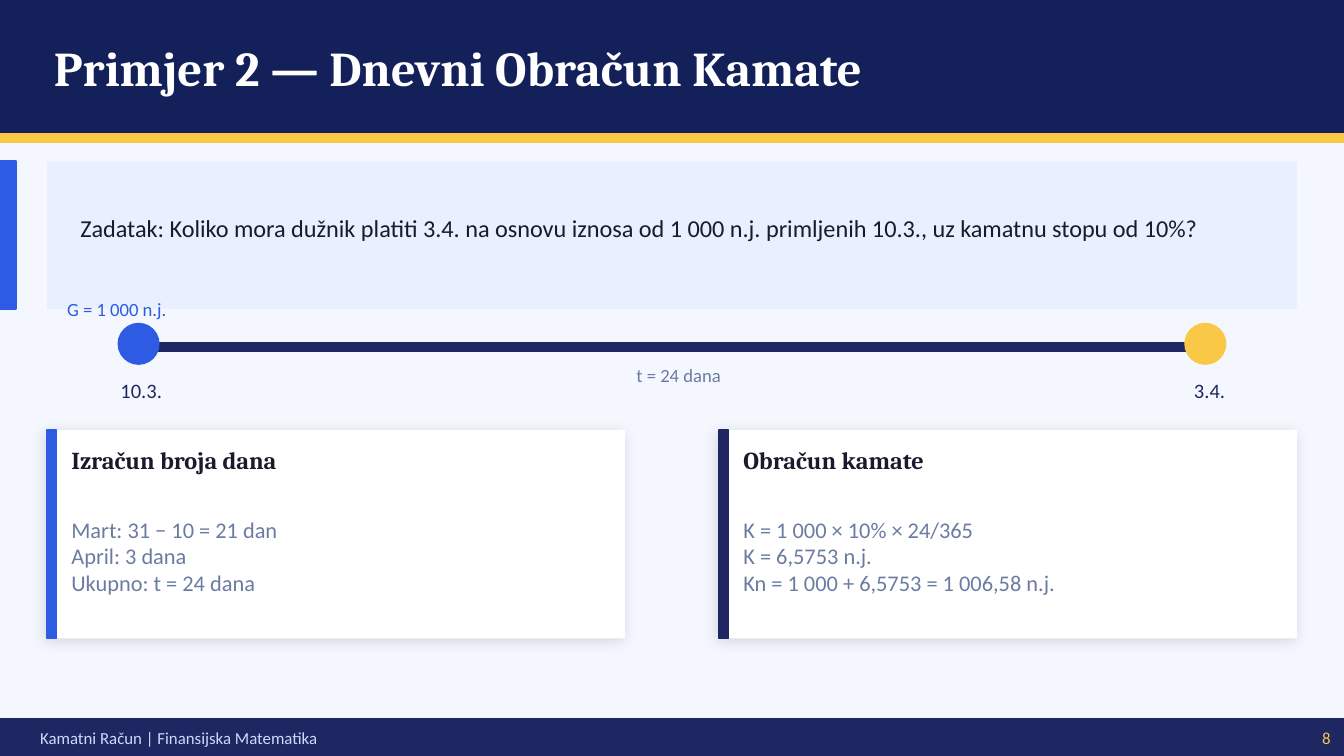
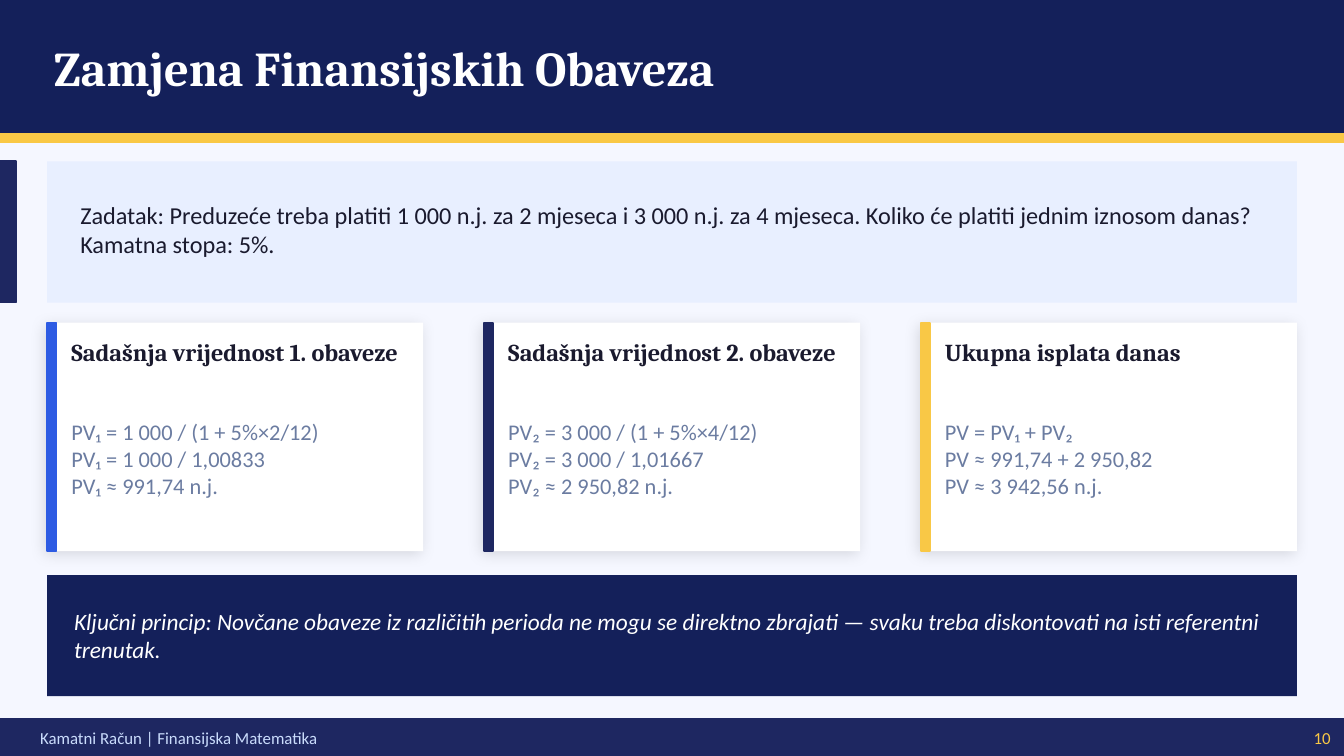
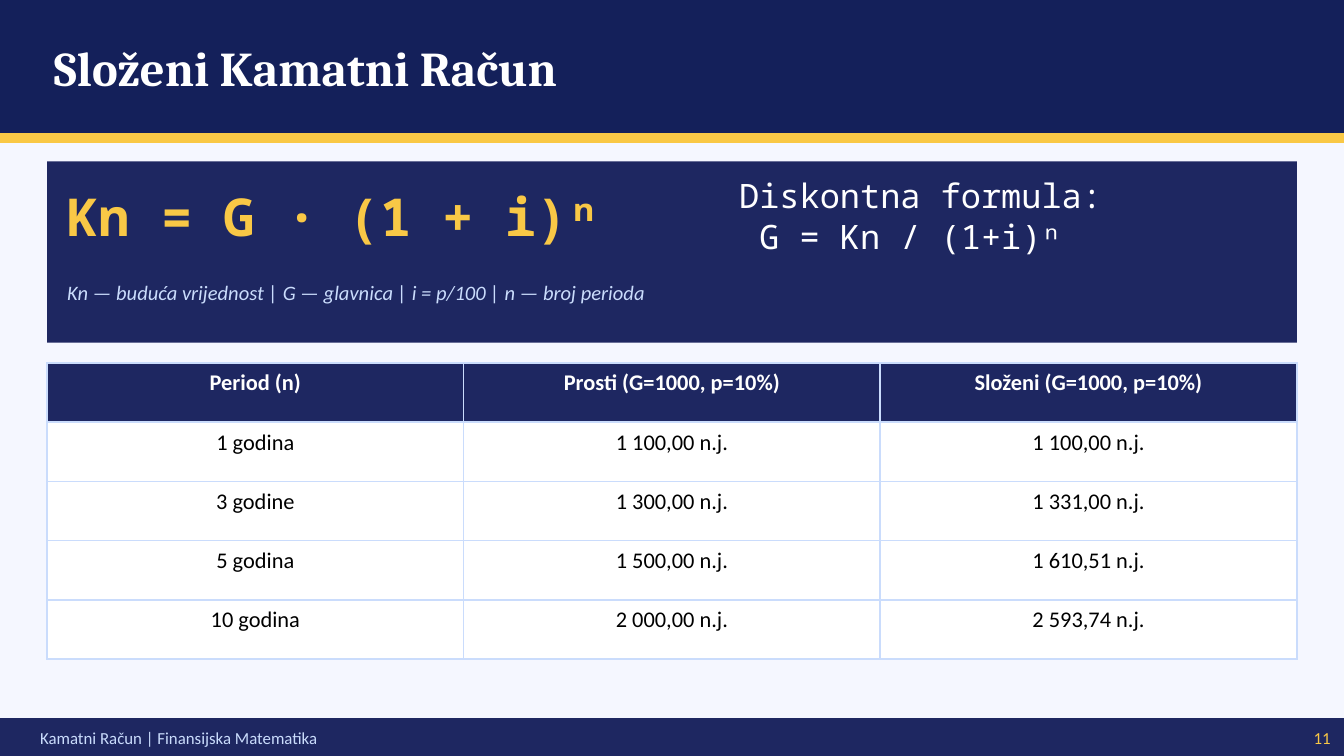
from lxml.etree import SubElement
from pptx import Presentation
from pptx.dml.color import RGBColor
from pptx.enum.shapes import MSO_SHAPE
from pptx.enum.text import MSO_ANCHOR, MSO_AUTO_SIZE, PP_ALIGN
from pptx.oxml.ns import qn
from pptx.util import Cm, Pt

COLORS = {
    "page": "F5F7FF", "deep": "14205A", "navy": "1E2761", "blue": "2D5BE3",
    "gold": "F9C846", "pale": "E8EFFF", "ice": "CADCFC", "ink": "1A1A2E",
    "slate": "6B7CA1", "white": "FFFFFF", "black": "000000",
}
SLIDE_W, SLIDE_H = 25.4, 14.29
LEFT, CONTENT_W = 0.89, 23.62
FOOTER_Y, FOOTER_H = 13.59, 0.7


def rgb(name):
    return RGBColor.from_string(COLORS[name])


def write(tf, text, size=12, font="Calibri", color="ink", bold=False,
          italic=False, align=PP_ALIGN.LEFT):
    for i, line in enumerate(text.split("\n")):
        p = tf.paragraphs[0] if i == 0 else tf.add_paragraph()
        p.alignment = align
        r = p.add_run()
        r.text = line
        r.font.size = Pt(size)
        r.font.name = font
        r.font.bold = bold
        r.font.italic = italic
        r.font.color.rgb = rgb(color)


def format_frame(tf):
    tf.word_wrap = True
    tf.auto_size = MSO_AUTO_SIZE.NONE
    tf.vertical_anchor = MSO_ANCHOR.MIDDLE
    tf.margin_left = tf.margin_right = tf.margin_top = tf.margin_bottom = 0


def add_text(slide, x, y, w, h, text, **fmt):
    tf = slide.shapes.add_textbox(Cm(x), Cm(y), Cm(w), Cm(h)).text_frame
    format_frame(tf)
    write(tf, text, **fmt)
    return tf


def add_block(slide, x, y, w, h, fill, outlined=True, kind=MSO_SHAPE.RECTANGLE):
    sp = slide.shapes.add_shape(kind, Cm(x), Cm(y), Cm(w), Cm(h))
    sp.shadow.inherit = False
    sp.fill.solid()
    sp.fill.fore_color.rgb = rgb(fill)
    if outlined:
        sp.line.color.rgb = rgb(fill)
        sp.line.width = Pt(1)
    else:
        sp.line.fill.background()
    return sp


def add_soft_shadow(sp):
    effects = sp._element.spPr.find(qn("a:effectLst"))
    shadow = SubElement(effects, qn("a:outerShdw"), blurRad=str(Pt(8)),
                        dist=str(Pt(2)), dir=str(135 * 60000),
                        algn="bl", rotWithShape="0")
    color = SubElement(shadow, qn("a:srgbClr"), val=COLORS["black"])
    SubElement(color, qn("a:alpha"), val="12000")


def add_slide(prs, title, number):
    slide = prs.slides.add_slide(prs.slide_layouts[5])
    slide.background.fill.solid()
    slide.background.fill.fore_color.rgb = rgb("page")
    add_block(slide, 0, 0, SLIDE_W, 2.54, "deep")
    add_block(slide, 0, 2.54, SLIDE_W, 0.15, "gold")

    sp = slide.shapes.title
    sp.left, sp.top, sp.width, sp.height = Cm(1.02), Cm(0.25), Cm(23.37), Cm(2.03)
    format_frame(sp.text_frame)
    write(sp.text_frame, title, size=26, font="Cambria", color="white", bold=True)
    slide.shapes._spTree.append(sp._element)

    add_block(slide, 0, FOOTER_Y, SLIDE_W, FOOTER_H, "navy")
    add_text(slide, 0.76, FOOTER_Y, 20.32, FOOTER_H,
             "Kamatni Račun | Finansijska Matematika", size=9, color="ice")
    add_text(slide, 24.13, FOOTER_Y, 1.02, FOOTER_H, str(number),
             size=9, color="gold", align=PP_ALIGN.RIGHT)
    return slide


def add_task(slide, h, accent, text_y, text_h, text):
    add_block(slide, LEFT, 3.05, CONTENT_W, h, "pale", outlined=False)
    add_block(slide, 0, 3.05, 0.3, h, accent)
    add_text(slide, 1.52, text_y, 22.61, text_h, text, size=13)


def add_cards(slide, y, w, h, cards):
    step = (CONTENT_W - w) / (len(cards) - 1)
    for i, (accent, heading, body) in enumerate(cards):
        x = LEFT + i * step
        add_soft_shadow(add_block(slide, x, y, w, h, "white", outlined=False))
        add_block(slide, x, y, 0.18, h, accent)
        text_x, text_w = x + 0.46, w - 0.64
        add_text(slide, text_x, y + 0.15, text_w, 0.81, heading,
                 size=13, font="Cambria", bold=True)
        add_text(slide, text_x, y + 0.97, text_w, h - 1.12, body, color="slate")


def add_timeline(slide):
    center = PP_ALIGN.CENTER
    add_block(slide, 2.54, 6.48, 20.32, 0.15, "navy")
    for dot_x, label_x, color, date in (
            (2.24, 1.78, "blue", "10.3."), (22.4, 21.97, "gold", "3.4.")):
        add_block(slide, dot_x, 6.12, 0.76, 0.76, color, kind=MSO_SHAPE.OVAL)
        add_text(slide, label_x, 6.99, 1.78, 0.76, date,
                 size=11, color="navy", align=center)
    add_text(slide, 1.27, 5.46, 3.81, 0.76, "G = 1 000 n.j.", size=10, color="blue")
    add_text(slide, 10.92, 6.73, 3.81, 0.71, "t = 24 dana",
             size=10, color="slate", align=center)


def add_borders(cell, color):
    tcPr = cell._tc.get_or_add_tcPr()
    for i, side in enumerate(("a:lnL", "a:lnR", "a:lnT", "a:lnB")):
        ln = tcPr.makeelement(qn(side), {"w": str(Pt(1))})
        tcPr.insert(i, ln)
        fill = SubElement(ln, qn("a:solidFill"))
        SubElement(fill, qn("a:srgbClr"), val=COLORS[color])


def add_grid(slide, x, y, w, row_h, rows):
    table = slide.shapes.add_table(len(rows), len(rows[0]), Cm(x), Cm(y), Cm(w),
                                   Cm(row_h * len(rows))).table
    table.horz_banding = False
    for i, row in enumerate(rows):
        header = i == 0
        for j, value in enumerate(row):
            cell = table.cell(i, j)
            cell.fill.solid()
            cell.fill.fore_color.rgb = rgb("navy" if header else "white")
            write(cell.text_frame, value, bold=header, align=PP_ALIGN.CENTER,
                  color="white" if header else "black")
            add_borders(cell, "ice")


def build_daily_interest(prs):
    slide = add_slide(prs, "Primjer 2 — Dnevni Obračun Kamate", 8)
    add_task(slide, 2.79, "blue", 3.3, 2.03,
             "Zadatak: Koliko mora dužnik platiti 3.4. na osnovu iznosa od "
             "1 000 n.j. primljenih 10.3., uz kamatnu stopu od 10%?")
    add_timeline(slide)
    add_cards(slide, 8.13, 10.92, 3.94, [
        ("blue", "Izračun broja dana",
         "Mart: 31 − 10 = 21 dan\nApril: 3 dana\nUkupno: t = 24 dana"),
        ("navy", "Obračun kamate",
         "K = 1 000 × 10% × 24/365\nK = 6,5753 n.j.\n"
         "Kn = 1 000 + 6,5753 = 1 006,58 n.j."),
    ])


def build_debt_replacement(prs):
    slide = add_slide(prs, "Zamjena Finansijskih Obaveza", 10)
    add_task(slide, 2.67, "navy", 3.25, 2.16,
             "Zadatak: Preduzeće treba platiti 1 000 n.j. za 2 mjeseca i "
             "3 000 n.j. za 4 mjeseca. Koliko će platiti jednim iznosom danas? "
             "Kamatna stopa: 5%.")
    add_cards(slide, 6.1, 7.11, 4.32, [
        ("blue", "Sadašnja vrijednost 1. obaveze",
         "PV₁ = 1 000 / (1 + 5%×2/12)\nPV₁ = 1 000 / 1,00833\nPV₁ ≈ 991,74 n.j."),
        ("navy", "Sadašnja vrijednost 2. obaveze",
         "PV₂ = 3 000 / (1 + 5%×4/12)\nPV₂ = 3 000 / 1,01667\nPV₂ ≈ 2 950,82 n.j."),
        ("gold", "Ukupna isplata danas",
         "PV = PV₁ + PV₂\nPV ≈ 991,74 + 2 950,82\nPV ≈ 3 942,56 n.j."),
    ])
    add_block(slide, LEFT, 10.87, CONTENT_W, 2.29, "deep", outlined=False)
    add_text(slide, 1.4, 11.05, 22.86, 1.9,
             "Ključni princip: Novčane obaveze iz različitih perioda ne mogu se "
             "direktno zbrajati — svaku treba diskontovati na isti referentni "
             "trenutak.", size=12.5, color="white", italic=True)


def build_compound_interest(prs):
    slide = add_slide(prs, "Složeni Kamatni Račun", 11)
    add_block(slide, LEFT, 3.05, CONTENT_W, 3.43, "navy", outlined=False)
    add_text(slide, 1.27, 3.25, 11.43, 1.65, "Kn = G · (1 + i)ⁿ",
             size=28, font="Noto Sans Mono", color="gold", bold=True)
    add_text(slide, 1.27, 5.08, 22.86, 0.89,
             "Kn — buduća vrijednost | G — glavnica | "
             "i = p/100 | n — broj perioda",
             size=11, color="ice", italic=True)
    tf = add_text(slide, 13.97, 3.25, 10.16, 1.65,
                  "Diskontna formula:\nG = Kn / (1+i)ⁿ",
                  size=18, font="Noto Sans Mono", color="white")
    tf.paragraphs[1]._p.get_or_add_pPr().set("marL", str(Cm(0.38)))
    add_grid(slide, LEFT, 6.86, CONTENT_W, 1.12, [
        ("Period (n)", "Prosti (G=1000, p=10%)", "Složeni (G=1000, p=10%)"),
        ("1 godina", "1 100,00 n.j.", "1 100,00 n.j."),
        ("3 godine", "1 300,00 n.j.", "1 331,00 n.j."),
        ("5 godina", "1 500,00 n.j.", "1 610,51 n.j."),
        ("10 godina", "2 000,00 n.j.", "2 593,74 n.j."),
    ])


def main():
    prs = Presentation()
    prs.slide_width, prs.slide_height = Cm(SLIDE_W), Cm(SLIDE_H)
    build_daily_interest(prs)
    build_debt_replacement(prs)
    build_compound_interest(prs)
    prs.save("out.pptx")


if __name__ == "__main__":
    main()
